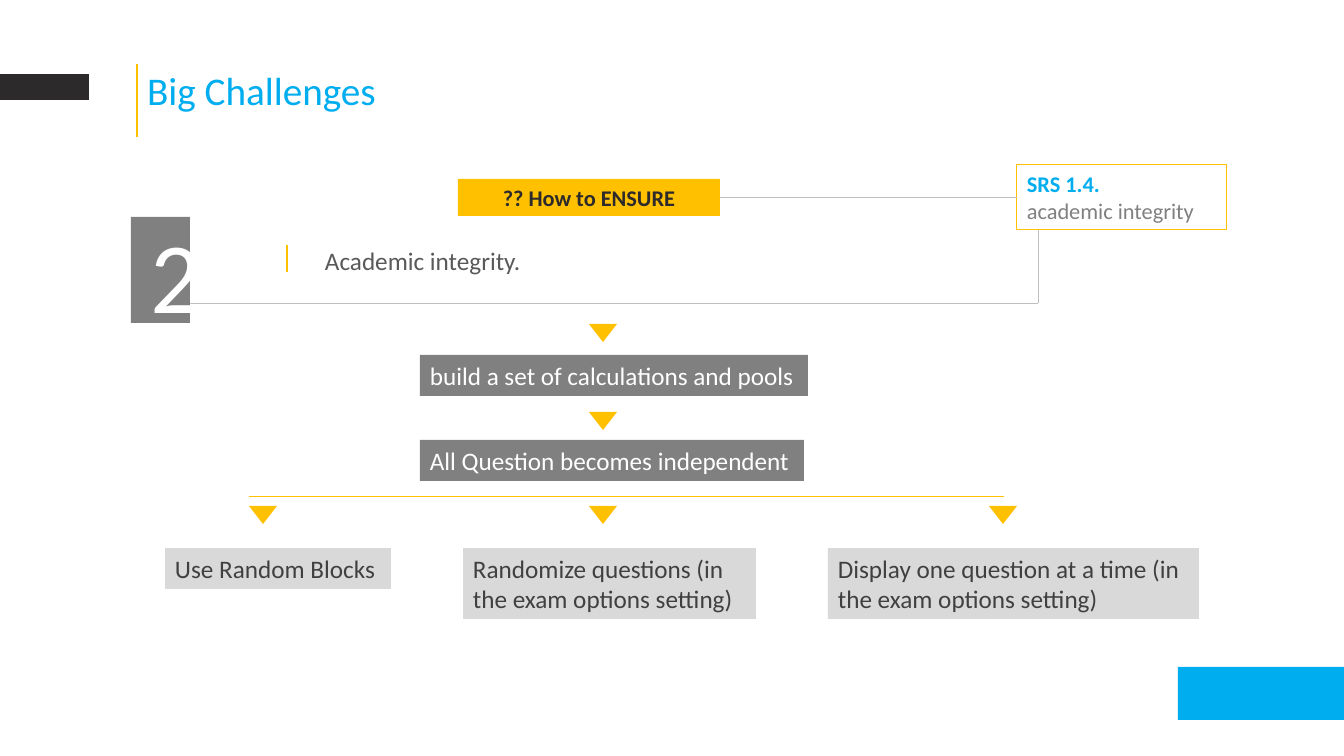
from lxml import etree
from pptx import Presentation
from pptx import util as u
from pptx.dml.color import RGBColor
from pptx.enum import shapes, text
from pptx.oxml import ns

PX = 914400 / 100.8
FONT = "Calibri"
WHITE = RGBColor(0xFF, 0xFF, 0xFF)
BLUE = RGBColor(0x00, 0xAD, 0xEF)
GOLD = RGBColor(0xFF, 0xC0, 0x00)
DARK = RGBColor(0x2C, 0x2A, 0x2B)
GREY = RGBColor(0x80, 0x80, 0x80)
LINE_GREY = RGBColor(0xBF, 0xBF, 0xBF)
PALE_GREY = RGBColor(0xD9, 0xD9, 0xD9)
TEXT_GREY = RGBColor(0x59, 0x59, 0x59)
OPTION_TEXT = RGBColor(0x40, 0x40, 0x40)

LEFT, CENTER, JUSTIFY = (
    text.PP_ALIGN.LEFT, text.PP_ALIGN.CENTER, text.PP_ALIGN.JUSTIFY)

prs = Presentation()
prs.slide_width = u.Emu(round(1344 * PX))
prs.slide_height = u.Emu(round(756 * PX))
slide = prs.slides.add_slide(prs.slide_layouts[5])


def block(box, fill, kind=shapes.MSO_SHAPE.RECTANGLE):
    shape = slide.shapes.add_shape(kind, *[round(v * PX) for v in box])
    shape.shadow.inherit = False
    shape.fill.solid()
    shape.fill.fore_color.rgb = fill
    shape.line.fill.background()
    return shape


def write(shape, lines, size, align=LEFT):
    frame = shape.text_frame
    frame.word_wrap = True
    frame.auto_size = text.MSO_AUTO_SIZE.SHAPE_TO_FIT_TEXT
    frame.vertical_anchor = text.MSO_ANCHOR.TOP
    for i, (words, color, bold) in enumerate(lines):
        paragraph = frame.add_paragraph() if i else frame.paragraphs[0]
        paragraph.alignment = align
        run = paragraph.add_run()
        run.text = words
        run.font.name = FONT
        run.font.size = u.Pt(size)
        run.font.bold = bold
        run.font.color.rgb = color


title = slide.shapes.title
title.left, title.top, title.width, title.height = [
    round(v * PX) for v in (137, 61, 357, 58)]
write(title, [("Big Challenges", BLUE, False)], 28)

block((1178, 667, 166, 53), BLUE)
block((0, 74, 89, 26), DARK)
block((131, 217, 59, 106), GREY)

number = slide.shapes.add_textbox(*[round(v * PX) for v in (141, 208, 47, 132)])
write(number, [("2", WHITE, False)], 72)
challenge = slide.shapes.add_textbox(
    *[round(v * PX) for v in (315, 240, 685, 40)])
write(challenge, [("Academic integrity.", TEXT_GREY, False)], 18, JUSTIFY)

how_to = block((458, 179, 262, 37), GOLD)
write(how_to, [("?? How to ENSURE", DARK, True)], 16, CENTER)
requirement = block((1017, 165, 210, 65), WHITE)
requirement.line.color.rgb = GOLD
requirement.line.width = u.Pt(0.75)
write(requirement, [("SRS 1.4.", BLUE, True),
                    ("academic integrity", GREY, False)], 16, JUSTIFY)

for box, fill, color, words in [
    ((420, 355, 388, 41), GREY, WHITE, "build a set of calculations and pools"),
    ((420, 440, 384, 41), GREY, WHITE, "All Question becomes independent"),
    ((165, 548, 226, 41), PALE_GREY, OPTION_TEXT, "Use Random Blocks"),
    ((463, 548, 293, 71), PALE_GREY, OPTION_TEXT,
     "Randomize questions (in the exam options setting)"),
    ((828, 548, 371, 71), PALE_GREY, OPTION_TEXT,
     "Display one question at a time (in the exam options setting)"),
]:
    write(block(box, fill), [(words, color, False)], 18)

for left, top in [(589, 324), (589, 412), (249, 506), (589, 506), (989, 506)]:
    arrow = block((left, top, 28, 18), GOLD,
                  shapes.MSO_SHAPE.ISOSCELES_TRIANGLE)
    arrow.rotation = 180

for ends, color, width, start, finish in [
    ((137, 64, 137, 137), GOLD, 1, None, None),
    ((287, 245, 287, 272), GOLD, 1, None, None),
    ((249, 496, 1004, 496), GOLD, 0.5, None, None),
    ((190, 303, 1038, 303), LINE_GREY, 0.5, None, None),
    ((1038, 303, 1038, 230), LINE_GREY, 0.5, None, None),
    ((720, 198, 1017, 198), LINE_GREY, 0.5, how_to, requirement),
]:
    rule = slide.shapes.add_connector(
        shapes.MSO_CONNECTOR.STRAIGHT, *[round(v * PX) for v in ends])
    rule.line.color.rgb = color
    rule.line.width = u.Pt(width)
    etree.SubElement(rule._element.spPr, ns.qn("a:effectLst"))
    if start:
        rule.begin_connect(start, 3)
        rule.end_connect(finish, 1)

prs.save("out.pptx")
